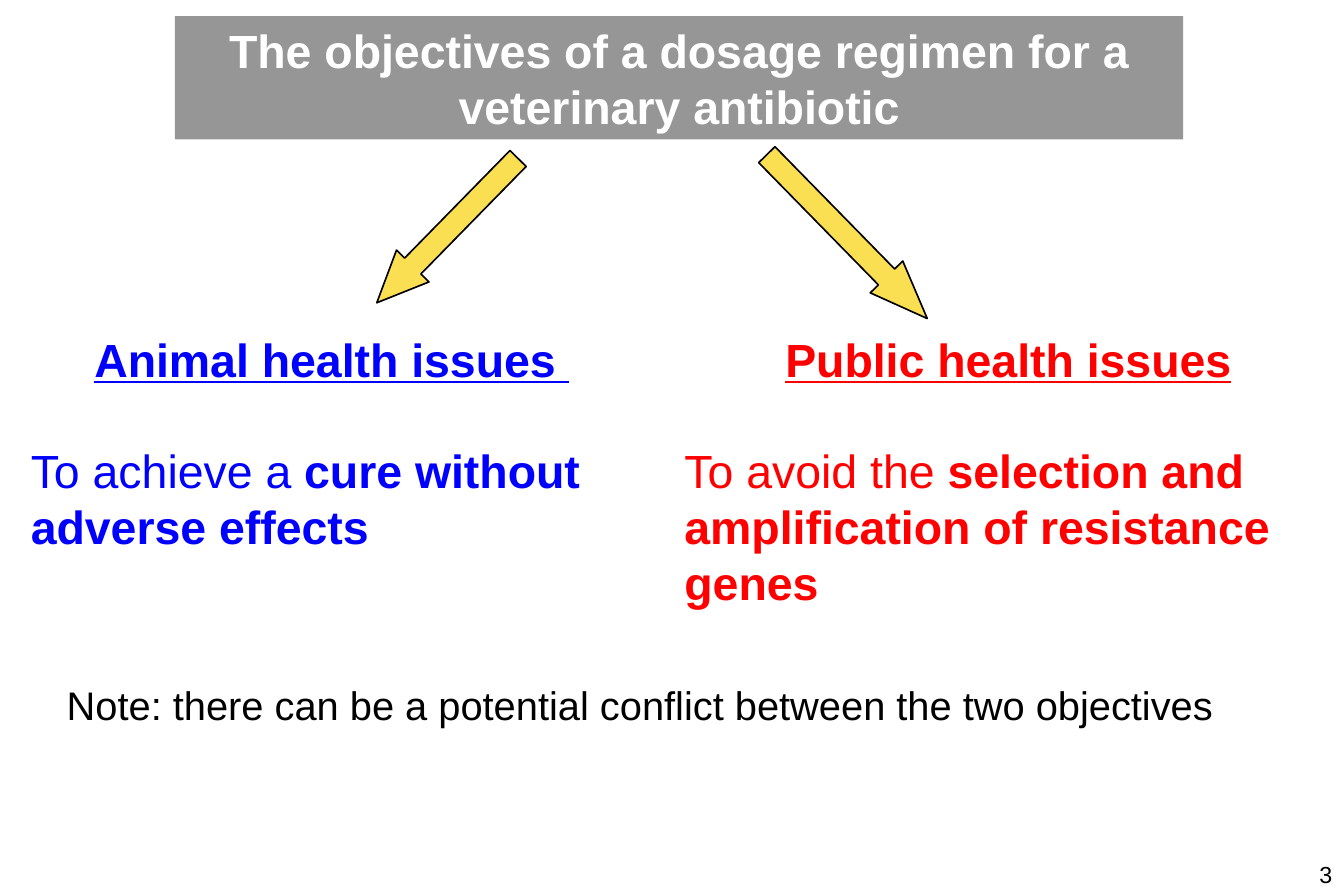
from pptx import Presentation
from pptx.dml.color import RGBColor
from pptx.enum.shapes import MSO_SHAPE as Shape
from pptx.enum.text import PP_ALIGN as Align
from pptx.util import Pt

COLORS = {"banner": "969696", "white": "FFFFFF", "animal": "0000FF",
          "public": "FF0000", "arrow": "FBDF53", "black": "000000"}


def rgb(name):
    return RGBColor.from_string(COLORS[name])


def write(frame, paragraphs, size, color):
    """Fill a frame with (alignment, space before, [(text, font values)]) paragraphs."""
    frame.word_wrap = True
    for index, (alignment, gap, runs) in enumerate(paragraphs):
        paragraph = frame.add_paragraph() if index else frame.paragraphs[0]
        paragraph.alignment = alignment
        paragraph.space_before = Pt(gap)
        for text, font_values in runs:
            run = paragraph.add_run()
            run.text = text
            values = {"name": "Arial", "size": Pt(size), **font_values}
            for key, value in values.items():
                setattr(run.font, key, value)
            run.font.color.rgb = rgb(color)


prs = Presentation()
prs.slide_width, prs.slide_height = Pt(810), Pt(540)
slide = prs.slides.add_slide(prs.slide_layouts[6])
shapes = slide.shapes
bold = {"bold": True}
heading_font = {"bold": True, "underline": True}

# Title banner
banner = shapes.add_shape(Shape.RECTANGLE, Pt(105.4), Pt(9.8), Pt(607.6), Pt(74.2))
banner.shadow.inherit = False
banner.fill.solid()
banner.fill.fore_color.rgb = rgb("banner")
banner.line.fill.background()
title = "The objectives of a dosage regimen for a veterinary antibiotic"
write(banner.text_frame, [(Align.CENTER, 0, [(title, bold)])], 28, "white")

# The two objectives
objectives = [
    (11.5, 376.6, 143.3, "animal", "Animal health issues ",
     "To achieve a ", "cure without adverse effects"),
    (405.4, 404.6, 177.1, "public", "Public health issues",
     "To avoid the ", "selection and amplification of resistance genes"),
]
for left, width, height, color, heading, lead, aim in objectives:
    objective = shapes.add_textbox(Pt(left), Pt(195.8), Pt(width), Pt(height))
    write(objective.text_frame, [
        (Align.CENTER, 0, [(heading, heading_font)]),
        (Align.LEFT, 33.6, [(lead, {}), (aim, bold)]),
    ], 28, color)

# Arrows from the banner to each objective
for left, top, length, rotation, head in [(208.8, 125.3, 121.7, 134.4, 1.128),
                                          (441.4, 128.9, 138.2, 45.6, 1.278)]:
    arrow = shapes.add_shape(Shape.RIGHT_ARROW, Pt(left), Pt(top), Pt(length), Pt(27.4))
    arrow.shadow.inherit = False
    arrow.rotation = rotation
    arrow.adjustments[0], arrow.adjustments[1] = 0.5, round(head, 2)
    arrow.fill.solid()
    arrow.fill.fore_color.rgb = rgb("arrow")
    arrow.line.color.rgb = rgb("black")
    arrow.line.width = Pt(1)

# Note and page number
for left, top, width, height, alignment, text, size in [
    (33.1, 406.8, 752.4, 36, Align.LEFT,
     "Note: there can be a potential conflict between the two objectives", 24),
    (600.5, 514.8, 209.5, 25.2, Align.RIGHT, "3", 14),
]:
    line = shapes.add_textbox(Pt(left), Pt(top), Pt(width), Pt(height))
    write(line.text_frame, [(alignment, 0, [(text, {})])], size, "black")

prs.save("out.pptx")
